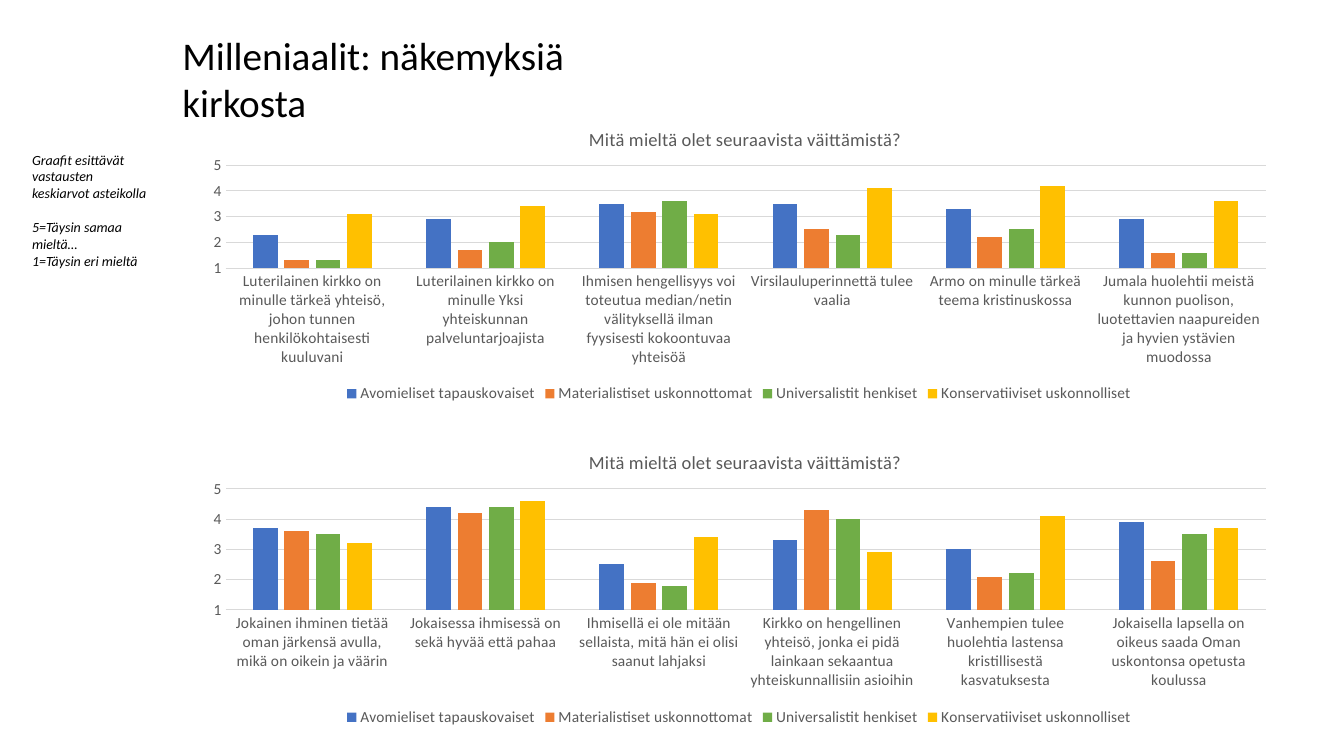
"""Build a slide with two clustered column charts of millennials' views on the church."""
from lxml import etree
from pptx import Presentation
from pptx import util as u
from pptx.chart.data import CategoryChartData
from pptx.dml.color import RGBColor
from pptx.enum import chart as ch
from pptx.oxml import ns

FONT = "Calibri"
GREY, RULE, BLACK = "595959", "D9D9D9", "000000"
TITLE = "Milleniaalit: näkemyksiä kirkosta"
NOTE = ["Graafit esittävät vastausten keskiarvot asteikolla",
        "5=Täysin samaa mieltä…\v1=Täysin eri mieltä"]
QUESTION = "Mitä mieltä olet seuraavista väittämistä?"
GROUPS = [("Avomieliset tapauskovaiset", "4472C4"),
          ("Materialistiset uskonnottomat", "ED7D31"),
          ("Universalistit henkiset", "70AD47"),
          ("Konservatiiviset uskonnolliset", "FFC000")]
CHARTS = [
    {"top": 1.04, "plot_height": 0.34, "answers": [
        ("Luterilainen kirkko on minulle tärkeä yhteisö, johon tunnen henkilökohtaisesti kuuluvani",
         (2.3, 1.3, 1.3, 3.1)),
        ("Luterilainen kirkko on minulle Yksi yhteiskunnan palveluntarjoajista",
         (2.9, 1.7, 2, 3.4)),
        ("Ihmisen hengellisyys voi toteutua median/netin välityksellä ilman fyysisesti "
         "kokoontuvaa yhteisöä", (3.5, 3.2, 3.6, 3.1)),
        ("Virsilauluperinnettä tulee vaalia", (3.5, 2.5, 2.3, 4.1)),
        ("Armo on minulle tärkeä teema kristinuskossa", (3.3, 2.2, 2.5, 4.2)),
        ("Jumala huolehtii meistä kunnon puolison, luotettavien naapureiden ja hyvien "
         "ystävien muodossa", (2.9, 1.6, 1.6, 3.6))]},
    {"top": 4.25, "plot_height": 0.4, "answers": [
        ("Jokainen ihminen tietää oman järkensä avulla, mikä on oikein ja väärin",
         (3.7, 3.6, 3.5, 3.2)),
        ("Jokaisessa ihmisessä on sekä hyvää että pahaa", (4.4, 4.2, 4.4, 4.6)),
        ("Ihmisellä ei ole mitään sellaista, mitä hän ei olisi saanut lahjaksi",
         (2.5, 1.9, 1.8, 3.4)),
        ("Kirkko on hengellinen yhteisö, jonka ei pidä lainkaan sekaantua "
         "yhteiskunnallisiin asioihin", (3.3, 4.3, 4, 2.9)),
        ("Vanhempien tulee huolehtia lastensa kristillisestä kasvatuksesta",
         (3, 2.1, 2.2, 4.1)),
        ("Jokaisella lapsella on oikeus saada Oman uskontonsa opetusta koulussa",
         (3.9, 2.6, 3.5, 3.7))]},
]


def rgb(value):
    return RGBColor.from_string(value)


def style(font, size, color, italic=False):
    font.name, font.size, font.bold, font.italic = FONT, u.Pt(size), False, italic
    font.color.rgb = rgb(color)


def add_text(s, box, lines, size, italic=False):
    tf = s.shapes.add_textbox(*map(u.Inches, box)).text_frame
    tf.word_wrap = True
    for i, line in enumerate(lines):
        p = tf.paragraphs[0] if i == 0 else tf.add_paragraph()
        p.text = line
        if i:
            p.space_before = u.Pt(12)
        style(p.font, size, BLACK, italic)


def set_layout(parent, index, **values):
    for old in parent.findall(ns.qn("c:layout")):
        parent.remove(old)
    layout = etree.Element(ns.qn("c:layout"))
    manual = etree.SubElement(layout, ns.qn("c:manualLayout"))
    for tag, value in values.items():
        etree.SubElement(manual, ns.qn("c:" + tag)).set("val", str(value))
    parent.insert(index, layout)


def add_columns(s, top, plot_height, answers):
    data = CategoryChartData(number_format="General")
    data.categories = [claim for claim, _ in answers]
    for i, (name, _) in enumerate(GROUPS):
        data.add_series(name, [means[i] for _, means in answers])
    box = map(u.Inches, (1.89, top, 10.88, 3))
    chart = s.shapes.add_chart(ch.XL_CHART_TYPE.COLUMN_CLUSTERED, *box, data).chart
    style(chart.font, 11, BLACK)

    chart.has_title = True
    p = chart.chart_title.text_frame.paragraphs[0]
    p.text = QUESTION
    style(p.font, 13.2, GREY)
    title = chart.chart_title._element
    set_layout(title, 1, xMode="edge", yMode="edge", x=0.36, y=0.06)

    chart.has_legend = True
    chart.legend.position = ch.XL_LEGEND_POSITION.BOTTOM
    chart.legend.include_in_layout = False
    style(chart.legend.font, 11, GREY)

    plot = chart.plots[0]
    plot.gap_width, plot.overlap, plot.vary_by_categories = 219, -27, False
    for series, (_, color) in zip(plot.series, GROUPS):
        series.format.fill.solid()
        series.format.fill.fore_color.rgb = rgb(color)
        series.invert_if_negative = False

    cat, val = chart.category_axis, chart.value_axis
    for axis in (cat, val):
        axis.major_tick_mark = axis.minor_tick_mark = ch.XL_TICK_MARK.NONE
        style(axis.tick_labels.font, 11, GREY)
    val.minimum_scale, val.maximum_scale, val.major_unit = 1, 5, 1
    val.has_major_gridlines = True
    val.format.line.fill.background()
    for line in (cat.format.line, val.major_gridlines.format.line):
        line.color.rgb, line.width = rgb(RULE), u.Pt(0.75)
    area = chart._chartSpace.find(".//" + ns.qn("c:plotArea"))
    set_layout(area, 0, layoutTarget="inner", xMode="edge", yMode="edge",
               x=0.032, y=0.2, w=0.948, h=plot_height)


def main():
    prs = Presentation()
    prs.slide_width, prs.slide_height = u.Inches(13.33), u.Inches(7.5)
    s = prs.slides.add_slide(prs.slide_layouts[6])
    for spec_values in CHARTS:
        add_columns(s, **spec_values)
    add_text(s, (1.71, 0.26, 5.25, 0.57), [TITLE], 28)
    add_text(s, (0.22, 1.45, 1.33, 1.28), NOTE, 10, italic=True)
    prs.save("out.pptx")


if __name__ == "__main__":
    main()
